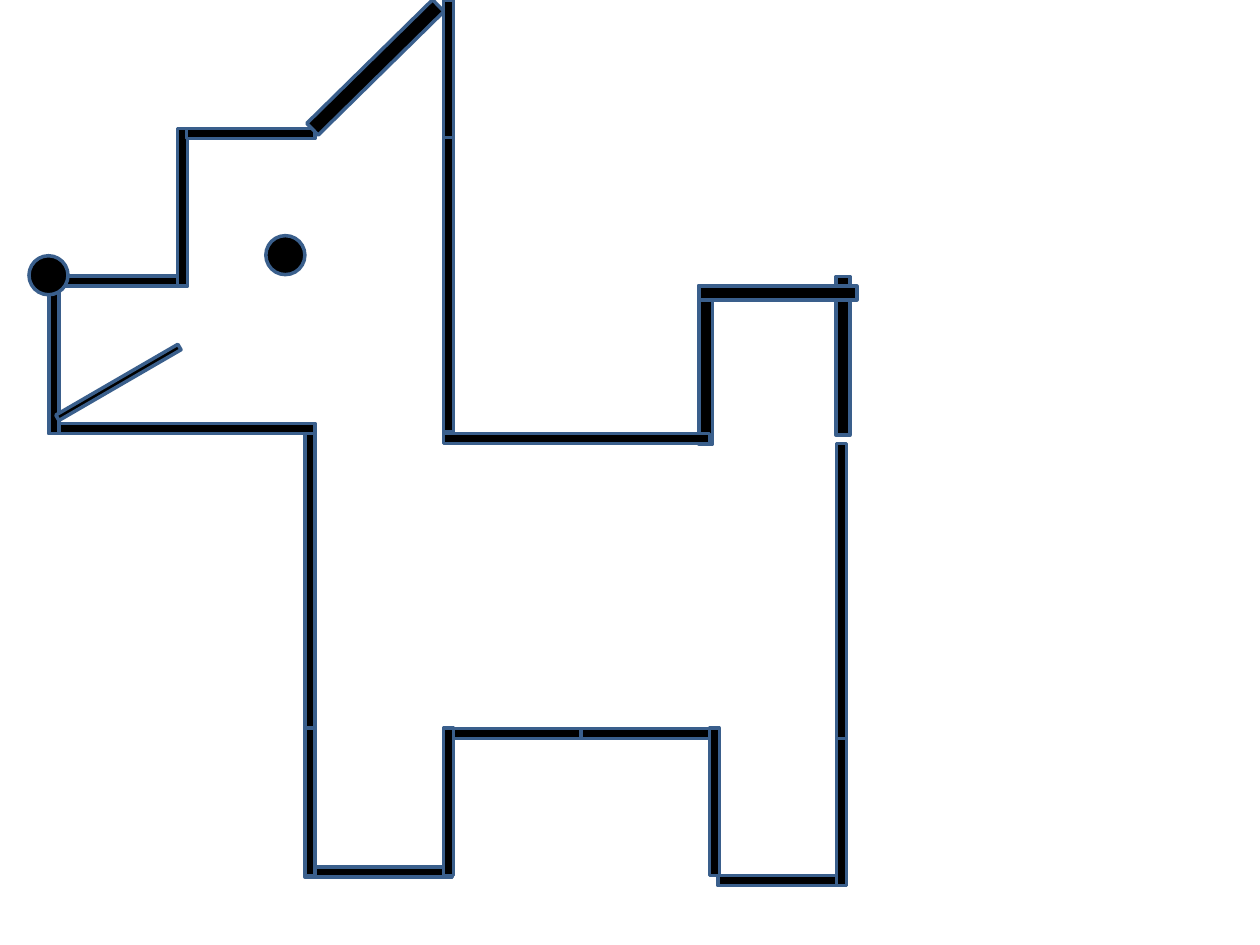
from pptx import Presentation
from pptx.dml.color import RGBColor
from pptx.enum.shapes import MSO_SHAPE as Shape
from pptx.util import Inches, Pt

BLACK = RGBColor(0x00, 0x00, 0x00)
BLUE = RGBColor(0x3A, 0x5F, 0x8C)
THIN, THICK = 0.08, 0.11  # bar thickness in inches

deck = Presentation()
deck.slide_width, deck.slide_height = Inches(10), Inches(7.5)
page = deck.slides.add_slide(deck.slide_layouts[6])


def add_part(kind, left, top, width, height, rotation=0):
    part = page.shapes.add_shape(
        kind, Inches(left), Inches(top), Inches(width), Inches(height))
    part.rotation = rotation
    part.shadow.inherit = False
    part.fill.solid()
    part.fill.fore_color.rgb = BLACK
    part.line.color.rgb = BLUE
    part.line.width = Pt(2)


# Bars of the dog, back to front: left, top, width, height, rotation
bars = [
    # Neck, back, chest and jaw
    (3.52, 1.09, THIN, 2.34, 0),
    (6.64, 3.52, THIN, 2.34, 0),
    (2.42, 3.44, THIN, 2.34, 0),
    (0.39, 3.36, 2.11, THIN, 0),
    # Inner side of the tail and top of the back
    (4.97, 2.84, 1.26, THICK, 90),
    (3.52, 3.44, 2.11, THIN, 0),
    # Forehead, snout and top of the head
    (1.41, 1.02, THIN, 1.25, 0),
    (0.39, 2.27, THIN, 1.17, 0),
    (0.39, 2.19, 1.02, THIN, 0),
    (1.48, 1.02, 1.02, THIN, 0),
    # Ear
    (2.28, 0.47, 1.4, 0.13, 315.5),
    (3.52, 0, THIN, 1.09, 0),
    # Outer side and top of the tail
    (6.06, 2.77, 1.26, THICK, 90),
    (5.55, 2.27, 1.25, THICK, 180),
    # Feet
    (2.42, 6.88, 1.17, THIN, 0),
    (5.7, 6.95, 1.02, THIN, 0),
    # Belly
    (3.59, 5.78, 1.02, THIN, 0),
    (4.61, 5.78, 1.02, THIN, 0),
    # Legs
    (3.52, 5.78, THIN, 1.17, 0),
    (5.63, 5.78, THIN, 1.17, 0),
    (2.42, 5.78, THIN, 1.17, 0),
    (6.64, 5.86, THIN, 1.17, 0),
]
for bar in bars:
    add_part(Shape.RECTANGLE, *bar)

# Nose and eye
for left, top in [(0.23, 2.03), (2.11, 1.87)]:
    add_part(Shape.FLOWCHART_CONNECTOR, left, top, 0.31, 0.31)

# Mouth
add_part(Shape.RECTANGLE, 0.38, 3.01, 1.12, 0.05, 329.9)

deck.save("out.pptx")
